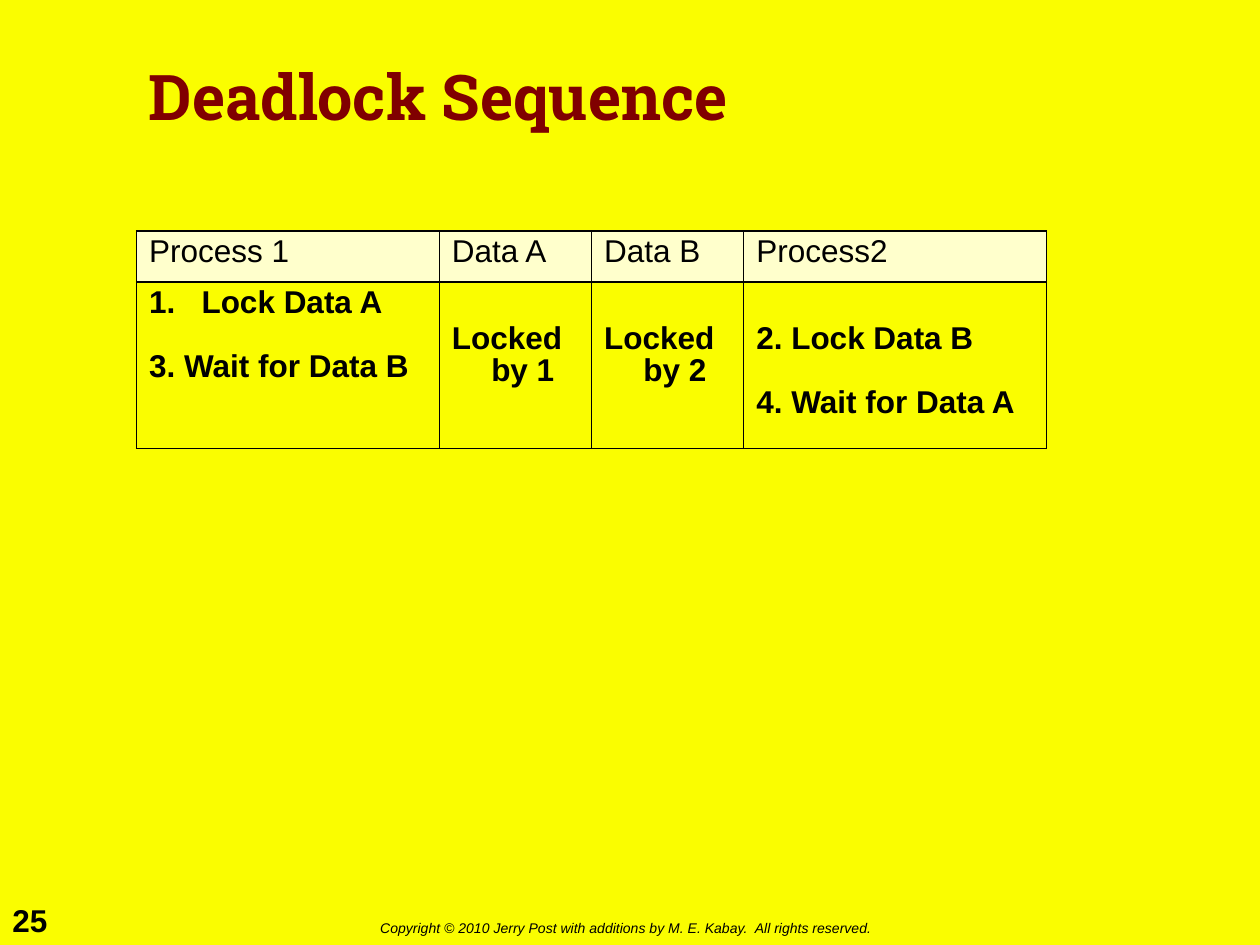
from lxml import etree
from pptx import Presentation
from pptx.dml.color import RGBColor
from pptx.enum import text as text_enum
from pptx.oxml import ns
from pptx.util import Pt

YELLOW = RGBColor(0xFA, 0xFD, 0x00)
CREAM = RGBColor(0xFF, 0xFF, 0xCC)
MAROON = RGBColor(0x80, 0x00, 0x00)
BLACK = RGBColor(0x00, 0x00, 0x00)

COLUMN_WIDTHS = (173, 87, 87, 173)
HEADINGS = ("Process 1", "Data A", "Data B", "Process2")
STEPS = (
    ("Lock Data A", "3. Wait for Data B"),
    ("Locked by 1",),
    ("Locked by 2",),
    ("2. Lock Data B", "4. Wait for Data A"),
)
CELL_MARGIN = 3.6
STEP_GAP = 18.5
LATER_STEP_OFFSET = 20.5


def write_text(paragraph, content, size=18, font="Arial", color=BLACK, bold=False,
               italic=False, line_spacing=None, indent=0, space_before=None, numbered=False):
    properties = paragraph._p.get_or_add_pPr()
    if indent:
        properties.set("marL", str(Pt(indent)))
        properties.set("indent", str(Pt(-indent)))
    if numbered:
        etree.SubElement(properties, ns.qn("a:buFont"), typeface="+mj-lt")
        etree.SubElement(properties, ns.qn("a:buAutoNum"), type="arabicPeriod")
    if line_spacing:
        paragraph.line_spacing = line_spacing
    if space_before:
        paragraph.space_before = Pt(space_before)
    run = paragraph.add_run()
    run.text = content
    run.font.size = Pt(size)
    run.font.name = font
    run.font.bold = bold
    run.font.italic = italic
    run.font.color.rgb = color


def add_text_box(slide, box, content, wrap=False, anchor=text_enum.MSO_ANCHOR.TOP, **text_format):
    frame = slide.shapes.add_textbox(*map(Pt, box)).text_frame
    frame.word_wrap = wrap
    frame.vertical_anchor = anchor
    write_text(frame.paragraphs[0], content, **text_format)


def add_title(slide, box):
    add_text_box(slide, box, "Deadlock Sequence", wrap=True, anchor=text_enum.MSO_ANCHOR.MIDDLE,
                 size=36, font="Roboto Slab", color=MAROON, bold=True, line_spacing=0.9)


def add_footer(slide, box):
    left, top, width, height = box
    add_text_box(slide, (left, top, 36, height), "25", bold=True)
    add_text_box(slide, (left + 210.2, top + 10.8, 304, 17.3),
                 "Copyright © 2010 Jerry Post with additions by M. E. Kabay.  All rights reserved.",
                 size=8, italic=True)


def add_borders(cell):
    properties = cell._tc.get_or_add_tcPr()
    for side in ("lnL", "lnR", "lnT", "lnB"):
        line = etree.SubElement(properties, ns.qn(f"a:{side}"), w=str(Pt(1)))
        fill = etree.SubElement(line, ns.qn("a:solidFill"))
        etree.SubElement(fill, ns.qn("a:srgbClr"), val=str(BLACK))


def add_sequence_table(slide, box):
    left, top, width, height = box
    header_height = 29.2
    table = slide.shapes.add_table(2, len(HEADINGS), *map(Pt, box)).table
    table.rows[0].height = Pt(header_height)
    table.rows[1].height = Pt(height - header_height)
    for index, (column_width, heading, steps) in enumerate(zip(COLUMN_WIDTHS, HEADINGS, STEPS)):
        table.columns[index].width = Pt(column_width)
        header, body = table.cell(0, index), table.cell(1, index)
        add_borders(header)
        add_borders(body)
        header.fill.solid()
        header.fill.fore_color.rgb = CREAM
        body.fill.background()
        write_text(header.text_frame.paragraphs[0], heading, line_spacing=0.9, indent=22.5)
        first_column = index == 0
        body.margin_top = Pt(CELL_MARGIN + (0 if first_column else LATER_STEP_OFFSET))
        for number, step in enumerate(steps):
            frame = body.text_frame
            paragraph = frame.add_paragraph() if number else frame.paragraphs[0]
            write_text(paragraph, step, bold=True, line_spacing=0.9,
                       indent=30 if first_column else 22.5,
                       space_before=STEP_GAP if number else None,
                       numbered=first_column and number == 0)


def main():
    presentation = Presentation()
    presentation.slide_width = Pt(720)
    presentation.slide_height = Pt(540)
    slide = presentation.slides.add_slide(presentation.slide_layouts[6])
    slide.background.fill.solid()
    slide.background.fill.fore_color.rgb = YELLOW
    add_footer(slide, (0, 511.2, 720, 28.8))
    add_title(slide, (78, 12, 564, 90))
    add_sequence_table(slide, (78, 132, sum(COLUMN_WIDTHS), 124.4))
    presentation.save("out.pptx")


if __name__ == "__main__":
    main()
